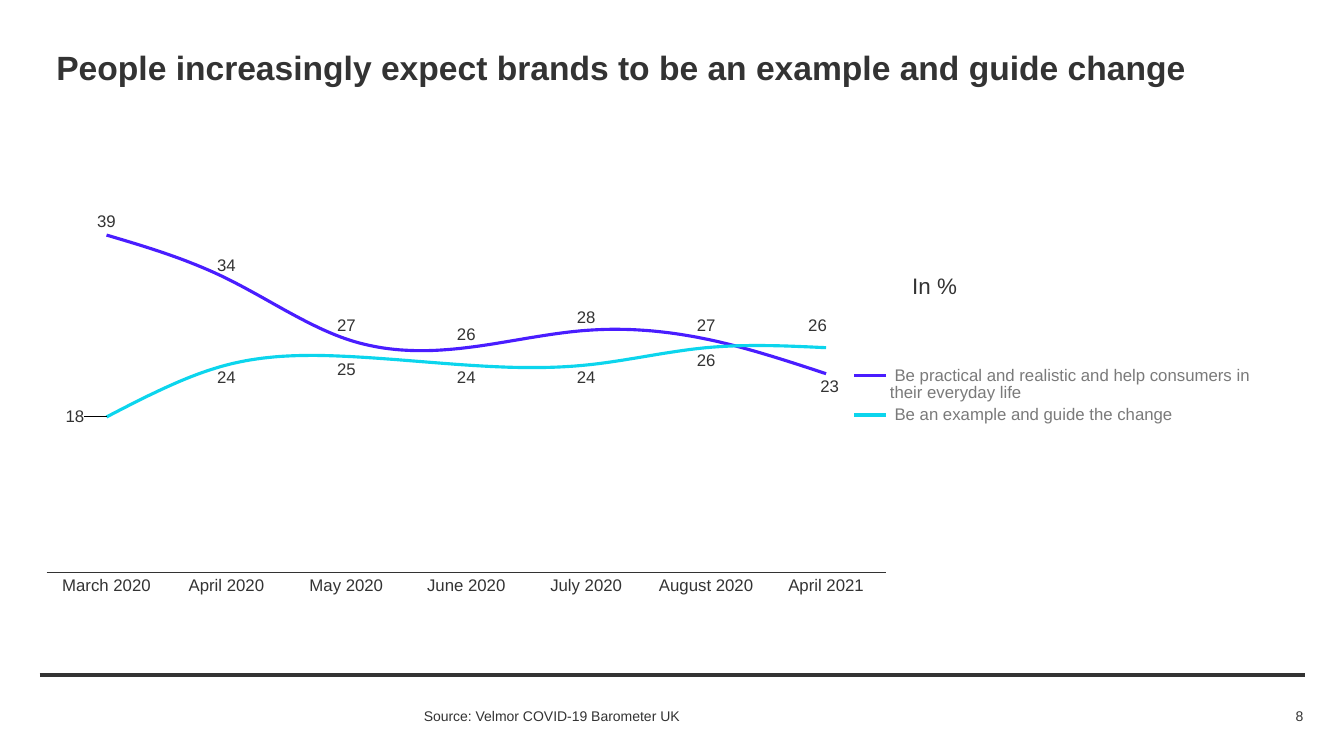
from lxml import etree
from pptx import Presentation
from pptx.chart.data import CategoryChartData
from pptx.dml.color import RGBColor
from pptx.enum import chart as ch, shapes, text
from pptx.oxml import parse_xml
from pptx.oxml.ns import nsdecls, qn
from pptx.util import Cm, Pt

DARK = RGBColor(0x33, 0x33, 0x33)
GREY = RGBColor(0x7A, 0x7A, 0x7A)
WHITE = RGBColor(0xFF, 0xFF, 0xFF)
VIOLET = RGBColor(0x49, 0x1D, 0xFF)
CYAN = RGBColor(0x0C, 0xD5, 0xED)
FONT = "Arial"

MONTHS = ["March 2020", "April 2020", "May 2020", "June 2020",
          "July 2020", "August 2020", "April 2021"]
POS = ch.XL_LABEL_POSITION
SERIES = [
    (" Be practical and realistic and help consumers in their everyday life",
     [39, 34, 27, 26, 28, 27, 23], VIOLET, POS.ABOVE,
     [(6, POS.BELOW, 0.003, 0)]),
    (" Be an example and guide the change",
     [18, 24, 25, 24, 24, 26, 26], CYAN, POS.BELOW,
     [(0, POS.LEFT, -0.015, 0), (6, POS.ABOVE, -0.007, -0.02)]),
]


def style_font(font, size, color=DARK, bold=False):
    font.name = FONT
    font.size = Pt(size)
    font.bold = bold
    font.color.rgb = color


def manual_layout(**values):
    parts = "".join(f'<c:{k} val="{v}"/>' for k, v in values.items())
    return parse_xml(f'<c:layout {nsdecls("c")}><c:manualLayout>{parts}'
                     '</c:manualLayout></c:layout>')


def fill_text(sp, words, size, bold=False, align=text.PP_ALIGN.LEFT,
              anchor=text.MSO_ANCHOR.MIDDLE):
    tf = sp.text_frame
    tf.word_wrap = True
    tf.auto_size = text.MSO_AUTO_SIZE.NONE
    tf.vertical_anchor = anchor
    tf.margin_left = tf.margin_right = tf.margin_top = tf.margin_bottom = 0
    p = tf.paragraphs[0]
    p.text = words
    p.alignment = align
    style_font(p.font, size, bold=bold)


def add_title(slide, left, top, width, height):
    sp = slide.shapes.title
    sp.left, sp.top, sp.width, sp.height = left, top, width, height
    fill_text(sp, "People increasingly expect brands to be an example "
                  "and guide change", 24, bold=True)


def style_series(series, color, position, moved):
    series.smooth = True
    series.format.line.color.rgb = color
    series.format.line.width = Pt(2.25)
    series.marker.style = ch.XL_MARKER_STYLE.NONE
    labels = series.data_labels
    labels.show_value = True
    labels.position = position
    labels.number_format = "0"
    labels.number_format_is_linked = False
    style_font(labels.font, 12)
    for idx, place, dx, dy in moved:
        label = series.points[idx].data_label
        style_font(label.font, 12)
        label.position = place
    for d_lbl, (_, _, dx, dy) in zip(series._element.iter(qn("c:dLbl")), moved):
        d_lbl.insert(1, manual_layout(x=dx, y=dy))


def add_trend_chart(slide, left, top, width, height):
    data = CategoryChartData(number_format="0")
    data.categories = MONTHS
    for name, values, *_ in SERIES:
        data.add_series(name, values)
    chart = slide.shapes.add_chart(ch.XL_CHART_TYPE.LINE, left, top,
                                   width, height, data).chart
    chart.has_title = False
    style_font(chart.font, 10)

    plot = chart.plots[0]
    plot.vary_by_categories = False
    for series, (_, _, color, position, moved) in zip(plot.series, SERIES):
        style_series(series, color, position, moved)

    months = chart.category_axis
    months.major_tick_mark = months.minor_tick_mark = ch.XL_TICK_MARK.NONE
    months.format.line.color.rgb = DARK
    months.format.line.width = Pt(0.75)
    style_font(months.tick_labels.font, 12)
    percent = chart.value_axis
    percent.minimum_scale, percent.maximum_scale = 0, 45
    percent.has_major_gridlines = False
    percent.visible = False

    chart.has_legend = True
    legend = chart.legend
    legend.position = ch.XL_LEGEND_POSITION.RIGHT
    legend.include_in_layout = False
    style_font(legend.font, 12, GREY)
    legend._element.find(qn("c:legendPos")).addnext(manual_layout(
        xMode="edge", yMode="edge", x=0.706, y=0.36, w=0.28, h=0.25))

    area = chart._chartSpace.chart.plotArea
    for old in area.findall(qn("c:layout")):
        area.remove(old)
    area.insert(0, manual_layout(layoutTarget="inner", xMode="edge",
                                 yMode="edge", x=0.005, y=0.006,
                                 w=0.686, h=0.908))

    sp = slide.shapes.add_textbox(left + Cm(21.97), top + Cm(2.31),
                                  Cm(3.43), Cm(0.69))
    fill_text(sp, "In %", 16, anchor=text.MSO_ANCHOR.TOP)


def add_footer(slide, left, top, width):
    line = slide.shapes.add_connector(shapes.MSO_CONNECTOR.STRAIGHT,
                                      left, top, left + width, top)
    line.line.color.rgb = DARK
    line.line.width = Pt(3)
    etree.SubElement(line._element.spPr, qn("a:effectLst"))

    row, height = top + Cm(0.76), Cm(0.56)
    source = slide.shapes.add_textbox(left + Cm(9.68), row, Cm(19.25), height)
    fill_text(source, "Source: Velmor COVID-19 Barometer UK", 10)
    number = slide.shapes.add_textbox(left + width - Cm(2.72), row,
                                      Cm(2.69), height)
    fill_text(number, "8", 10, align=text.PP_ALIGN.RIGHT)


def main():
    prs = Presentation()
    prs.slide_width, prs.slide_height = Cm(33.87), Cm(19.05)
    slide = prs.slides.add_slide(prs.slide_layouts[5])
    slide.background.fill.solid()
    slide.background.fill.fore_color.rgb = WHITE
    add_title(slide, Cm(1.42), Cm(1.12), Cm(31.85), Cm(1.12))
    add_trend_chart(slide, Cm(1.02), Cm(4.55), Cm(30.84), Cm(10.82))
    add_footer(slide, Cm(1), Cm(17), Cm(31.88))
    prs.save("out.pptx")


if __name__ == "__main__":
    main()
